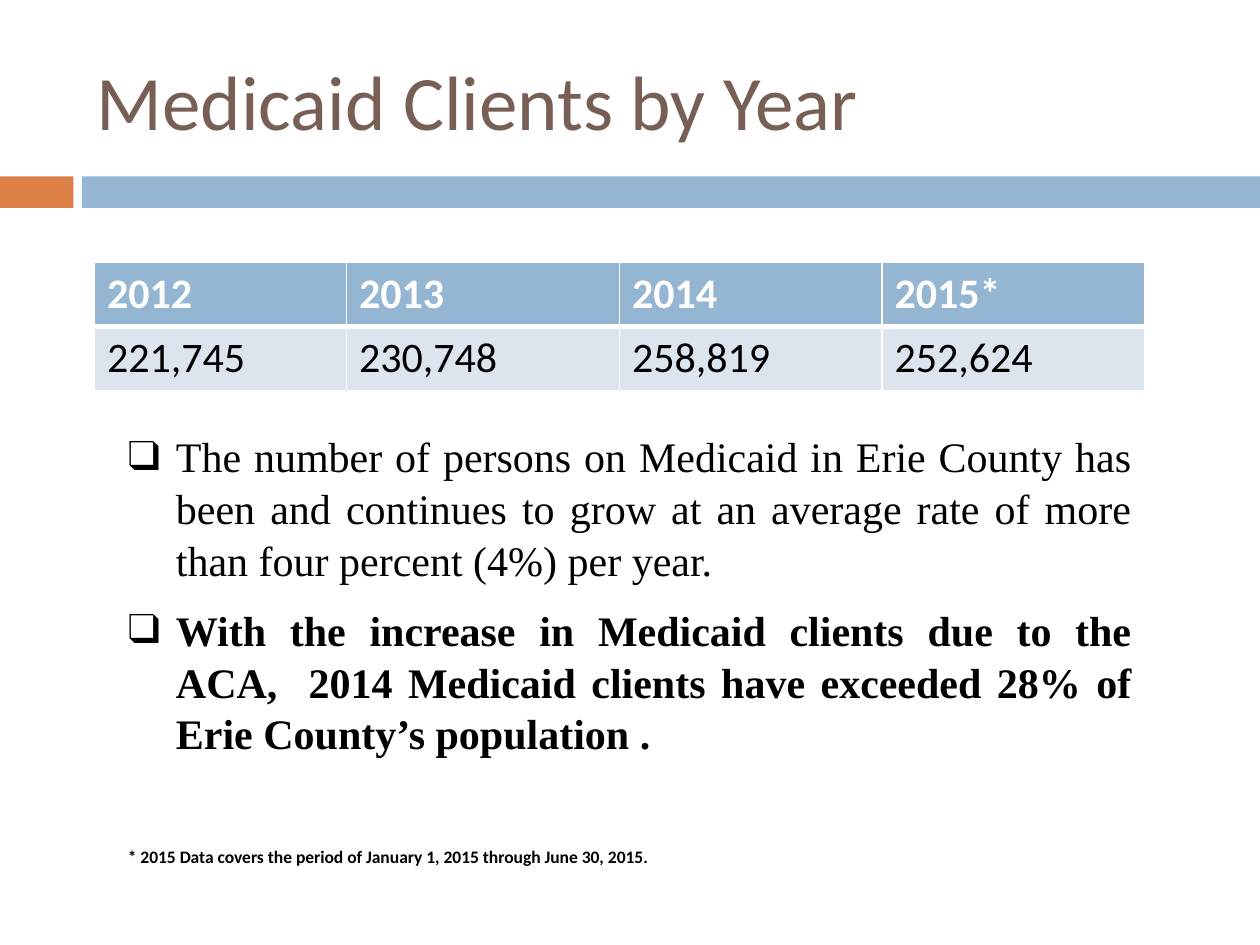
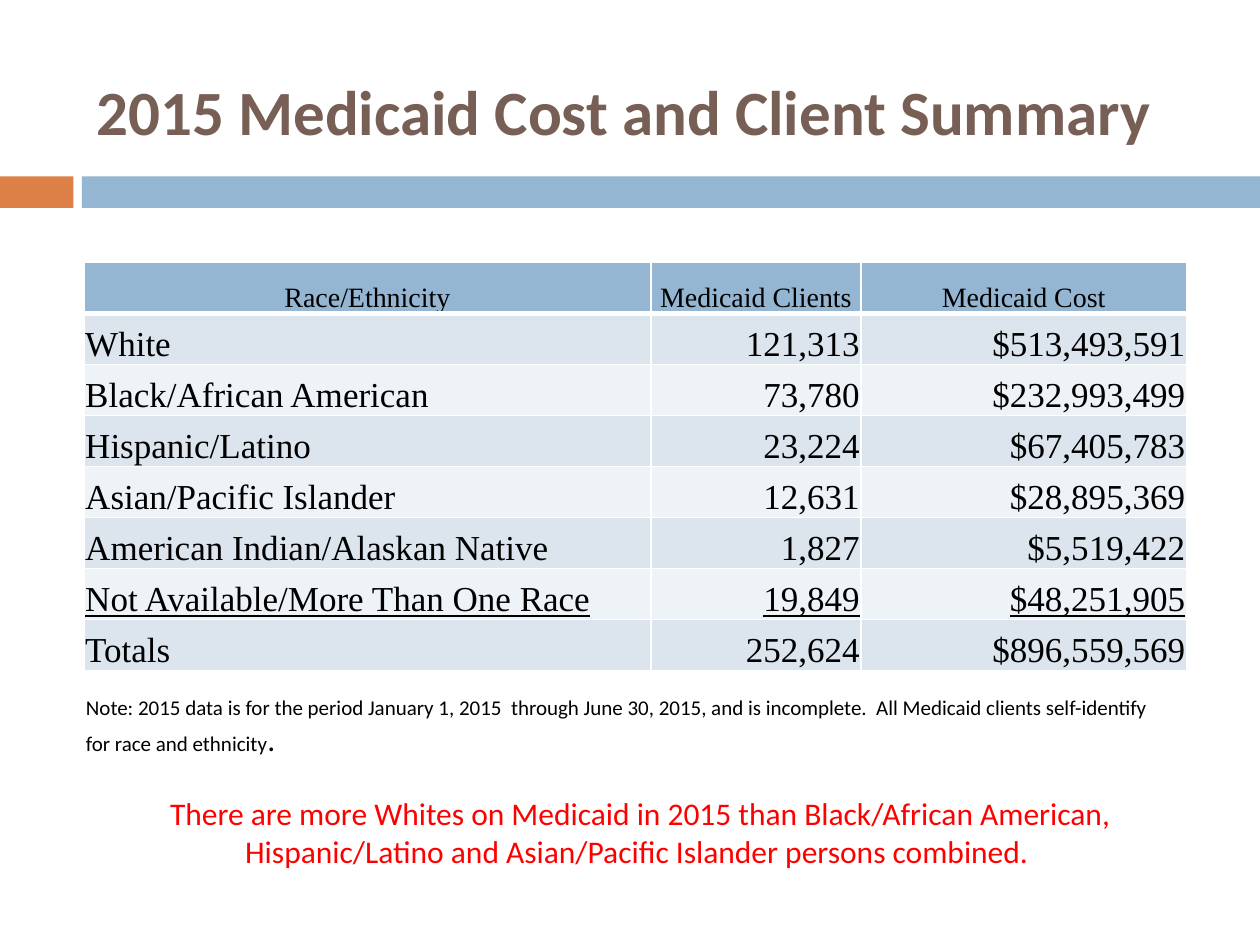
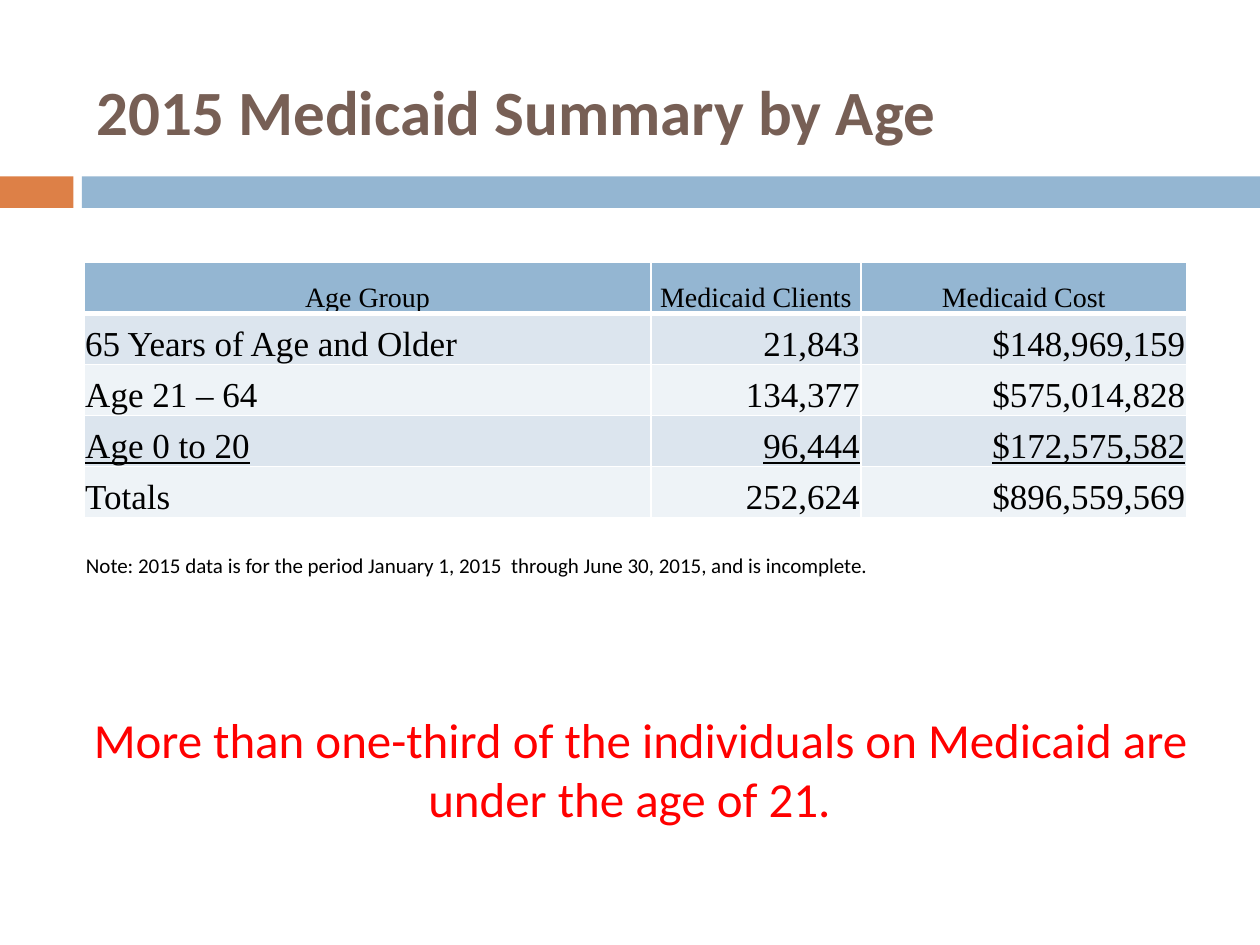
from lxml import etree
from pptx import Presentation
from pptx.dml.color import RGBColor
from pptx.enum.shapes import MSO_SHAPE
from pptx.enum.text import MSO_ANCHOR, MSO_AUTO_SIZE, PP_ALIGN
from pptx.oxml.ns import qn
from pptx.util import Inches, Pt

LEFT, CENTER, RIGHT, JUSTIFY = PP_ALIGN.LEFT, PP_ALIGN.CENTER, PP_ALIGN.RIGHT, PP_ALIGN.JUSTIFY
TOP, MIDDLE, BOTTOM = MSO_ANCHOR.TOP, MSO_ANCHOR.MIDDLE, MSO_ANCHOR.BOTTOM
FIXED_SIZE = MSO_AUTO_SIZE.NONE
RECTANGLE = MSO_SHAPE.RECTANGLE

SANS, SERIF = "Calibri", "Times New Roman"
BLACK, WHITE, RED = "000000", "FFFFFF", "FF0000"
BROWN, ORANGE, BLUE = "775F55", "DD8047", "94B6D2"
ROW_FILLS = ["DCE5EE", "EEF3F7"]

# The slide is a grid of 120 columns and 90 rows
CELL = Inches(10) / 120
TITLE_ONLY, TITLE_AND_BODY = 5, 1
SUMMARY_COLUMNS = [54, 20, 31]
SUMMARY_ROW = 4.86
NOTE = "Note: 2015 data is for the period January 1, 2015  through June 30, 2015, and is incomplete."


def grid(*cells):
    """Turn grid columns and rows into slide lengths."""
    return [round(cell * CELL) for cell in cells]


def color(hex_value):
    return RGBColor.from_string(hex_value)


def style(span, size, font=SANS, ink=BLACK, bold=False, underline=False):
    span.font.size = Pt(size)
    span.font.name = font
    span.font.color.rgb = color(ink)
    span.font.bold = bold
    span.font.underline = underline


def place(shape, box):
    shape.left, shape.top, shape.width, shape.height = grid(*box)


def add_bands(deck, page):
    """Draw the two bands and move them to the master all slides share."""
    for left, width, fill in [(0, 7, ORANGE), (7.8, 112.2, BLUE)]:
        band = page.shapes.add_shape(RECTANGLE, *grid(left, 16.8, width, 3))
        band.shadow.inherit = False
        band.fill.solid()
        band.fill.fore_color.rgb = color(fill)
        band.line.fill.background()
        deck.slide_master.shapes.element.append(band.element)


def add_page(deck, layout, title, top, size, bold):
    page = deck.slides.add_slide(deck.slide_layouts[layout])
    heading = page.shapes.title
    place(heading, (8, top, 107, 13))
    frame = heading.text_frame
    frame.text = title
    frame.vertical_anchor = MIDDLE
    frame.auto_size = FIXED_SIZE
    para = frame.paragraphs[0]
    para.alignment = LEFT
    style(para.runs[0], size, ink=BROWN, bold=bold)
    return page


def add_text(page, box, text, size, ink=BLACK, bold=False, align=LEFT):
    frame = page.shapes.add_textbox(*grid(*box)).text_frame
    frame.word_wrap = True
    frame.text = text
    para = frame.paragraphs[0]
    para.alignment = align
    style(para.runs[0], size, ink=ink, bold=bold)
    return para


def add_bullets(page, box, items):
    """Fill the body placeholder with (text, bold) items."""
    body = page.placeholders[1]
    place(body, box)
    frame = body.text_frame
    frame.auto_size = FIXED_SIZE
    frame.vertical_anchor = TOP
    for index, (text, bold) in enumerate(items):
        para = frame.add_paragraph() if index else frame.paragraphs[0]
        para.text = text
        para.alignment = JUSTIFY
        para.line_spacing = 1.03
        para.space_before = Pt(10 if index else 0)
        style(para.runs[0], 24, SERIF, bold=bold)
        properties = para._p.get_or_add_pPr()
        properties.set("marL", str(Inches(0.38)))
        properties.set("indent", str(-Inches(0.38)))
        etree.SubElement(properties, qn("a:buFont"), typeface=SERIF)
        etree.SubElement(properties, qn("a:buChar"), char="❑")


def set_borders(cell, row):
    """White rules, the one below the header being thicker."""
    properties = cell._tc.get_or_add_tcPr()
    widths = {"L": 1, "R": 1, "T": 3 if row == 1 else 1, "B": 3 if row == 0 else 1}
    for side, width in widths.items():
        line = etree.SubElement(properties, qn(f"a:ln{side}"), w=str(Pt(width)))
        fill = etree.SubElement(line, qn("a:solidFill"))
        etree.SubElement(fill, qn("a:srgbClr"), val=WHITE)


def add_grid_table(page, left, top, columns, row_height, rows, style_cell):
    """Add a table; style_cell(cell, row, column) formats each cell's text."""
    box = grid(left, top, sum(columns), row_height * len(rows))
    table = page.shapes.add_table(len(rows), len(columns), *box).table
    for column, width in zip(table.columns, grid(*columns)):
        column.width = width
    for row, texts in enumerate(rows):
        table.rows[row].height = grid(row_height)[0]
        for column, text in enumerate(texts):
            cell = table.cell(row, column)
            cell.text_frame.text = text
            set_borders(cell, row)
            cell.fill.solid()
            cell.fill.fore_color.rgb = color(ROW_FILLS[(row - 1) % 2] if row else BLUE)
            style_cell(cell, row, column)


def style_year_cell(cell, row, column):
    header = row == 0
    style(cell.text_frame.paragraphs[0].runs[0], 24,
          ink=WHITE if header else BLACK, bold=header)


def add_summary_table(page, rows):
    """Add clients and cost by group, the row above the totals underlined."""
    def style_summary_cell(cell, row, column):
        cell.vertical_anchor = BOTTOM
        cell.margin_left = cell.margin_right = cell.margin_top = Inches(0.01)
        cell.margin_bottom = 0
        para = cell.text_frame.paragraphs[0]
        if row == 0:
            para.alignment = CENTER
        else:
            para.alignment = RIGHT if column else LEFT
        style(para.runs[0], 20 if row else 16, SERIF, underline=row == len(rows) - 2)

    add_grid_table(page, 8, 25, SUMMARY_COLUMNS, SUMMARY_ROW, rows, style_summary_cell)


def build_years(deck):
    page = add_page(deck, TITLE_AND_BODY, "Medicaid Clients by Year", 3, 44, False)
    add_bands(deck, page)
    rows = [["2012", "2013", "2014", "2015*"],
            ["221,745", "230,748", "258,819", "252,624"]]
    add_grid_table(page, 9, 25, [24, 26, 25, 25], 6, rows, style_year_cell)
    add_bullets(page, (11, 40.3, 98, 32), [
        ("The number of persons on Medicaid in Erie County has been and continues "
         "to grow at an average rate of more than four percent (4%) per year.", False),
        ("With the increase in Medicaid clients due to the ACA,  2014 Medicaid clients "
         "have exceeded 28% of Erie County’s population .", True),
    ])
    add_text(page, (11, 80, 59, 7),
             "* 2015 Data covers the period of January 1, 2015 through June 30, 2015.",
             10, bold=True)


def build_race(deck):
    page = add_page(deck, TITLE_ONLY, "2015 Medicaid Cost and Client Summary", 4, 36, True)
    add_summary_table(page, [
        ["Race/Ethnicity", "Medicaid Clients", "Medicaid Cost"],
        ["White", "121,313", "$513,493,591"],
        ["Black/African American", "73,780", "$232,993,499"],
        ["Hispanic/Latino", "23,224", "$67,405,783"],
        ["Asian/Pacific Islander", "12,631", "$28,895,369"],
        ["American Indian/Alaskan Native", "1,827", "$5,519,422"],
        ["Not Available/More Than One Race", "19,849", "$48,251,905"],
        ["Totals", "252,624", "$896,559,569"],
    ])
    note = add_text(page, (7, 65.6, 106, 7.3),
                    NOTE + "  All Medicaid clients self-identify for race and ethnicity", 12)
    period = note.add_run()
    period.text = "."
    style(period, 18)
    add_text(page, (7, 75, 108, 8.5),
             "There are more Whites on Medicaid in 2015 than Black/African American, "
             "Hispanic/Latino and Asian/Pacific Islander persons combined. ",
             18, RED, align=CENTER)


def build_age(deck):
    page = add_page(deck, TITLE_ONLY, "2015 Medicaid Summary by Age", 4, 36, True)
    add_summary_table(page, [
        ["Age Group", "Medicaid Clients", "Medicaid Cost"],
        ["65 Years of Age and Older", "21,843", "$148,969,159"],
        ["Age 21 – 64", "134,377", "$575,014,828"],
        ["Age 0 to 20", "96,444", "$172,575,582"],
        ["Totals", "252,624", "$896,559,569"],
    ])
    add_text(page, (7, 52, 106, 3.6), NOTE, 12)
    add_text(page, (7, 67, 108, 12.5),
             "More than one-third of the individuals on Medicaid are under the age of 21.  ",
             28, RED, align=CENTER)


def main():
    deck = Presentation()
    deck.slide_width, deck.slide_height = Inches(10), Inches(7.5)
    build_years(deck)
    build_race(deck)
    build_age(deck)
    deck.save("out.pptx")


if __name__ == "__main__":
    main()
